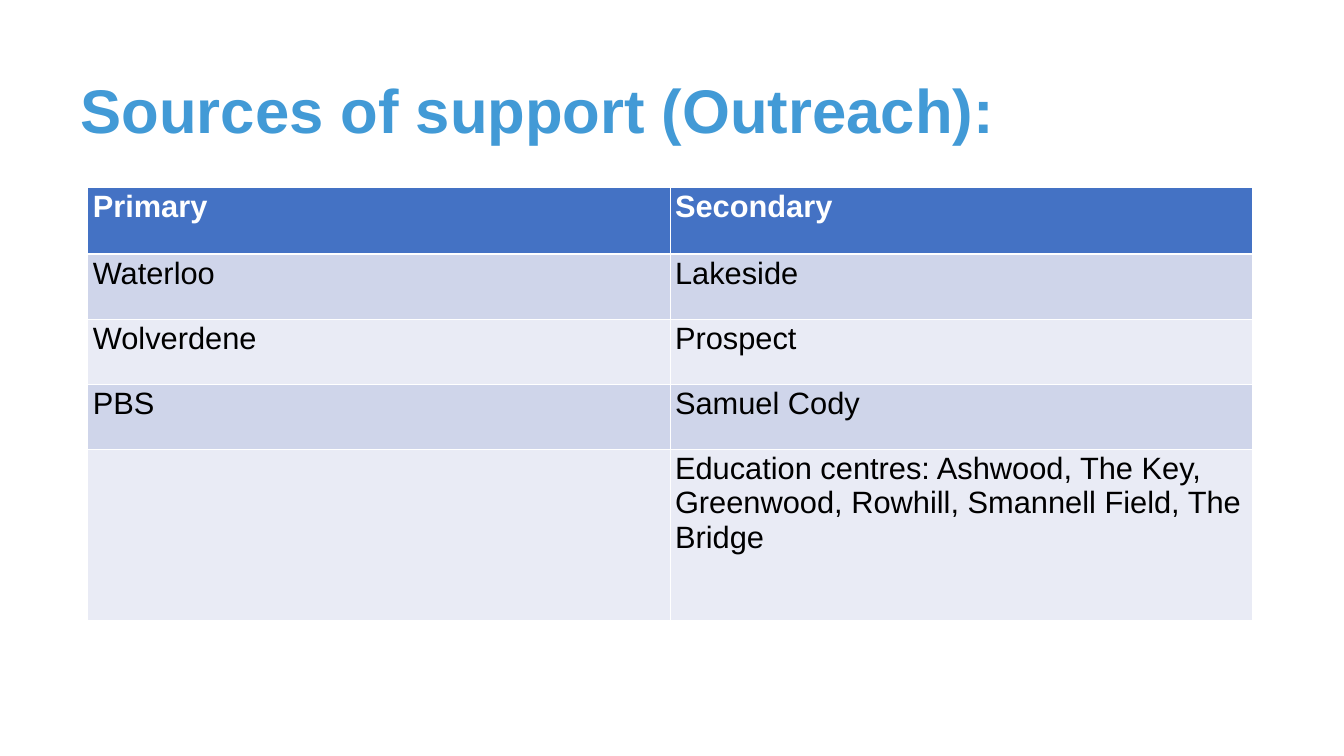
from dataclasses import dataclass

from lxml.etree import SubElement
from pptx import Presentation
from pptx.dml.color import RGBColor as RGB
from pptx.enum.text import MSO_ANCHOR as Anchor, MSO_AUTO_SIZE as Fit, PP_ALIGN as Align
from pptx.oxml.ns import qn
from pptx.util import Inches, Pt


@dataclass(frozen=True)
class Theme:
    """Colours, font and type sizes of the slide."""
    font: str = "Arial"
    title: str = "429AD6"
    head: str = "4472C4"
    bands: tuple = ("CFD5EA", "E9EBF5")
    light: str = "FFFFFF"
    dark: str = "000000"
    big: int = 88
    text: int = 44


THEME = Theme()
ROWS = [
    ("Primary", "Secondary"),
    ("Waterloo", "Lakeside"),
    ("Wolverdene", "Prospect"),
    ("PBS", "Samuel Cody"),
    ("", "Education centres: Ashwood, The Key, Greenwood, Rowhill, "
         "Smannell Field, The Bridge"),
]
HEIGHTS = [1.32, 1.29, 1.29, 1.29, 3.4]


def style(para, size, color, bold):
    """Set the font of a paragraph."""
    look = {"name": THEME.font, "size": Pt(size), "bold": bold}
    for key, value in look.items():
        setattr(para.font, key, value)
    para.font.color.rgb = RGB.from_string(color)


def add_title(slide, text, box):
    """Place and format the title placeholder."""
    title = slide.shapes.title
    for key, value in zip(("left", "top", "width", "height"), box):
        setattr(title, key, Inches(value))
    frame = title.text_frame
    form = {"text": text, "word_wrap": True, "auto_size": Fit.NONE,
            "vertical_anchor": Anchor.MIDDLE}
    for key, value in form.items():
        setattr(frame, key, value)
    para = frame.paragraphs[0]
    para.alignment, para.line_spacing = Align.LEFT, 0.9
    style(para, THEME.big, THEME.title, True)


def add_edges(cell, widths):
    """Draw the borders of a cell, given a width in points for each side."""
    props = cell._tc.get_or_add_tcPr()
    for side, width in widths.items():
        line = SubElement(props, qn(f"a:ln{side}"), w=str(Pt(width)))
        fill = SubElement(line, qn("a:solidFill"))
        SubElement(fill, qn("a:srgbClr"), val=THEME.light)


def fill_cell(cell, text, row):
    """Write one cell in the look of its row."""
    head = row == 0
    add_edges(cell, {"L": 1, "R": 1, "T": 3 if row == 1 else 1, "B": 3 if head else 1})
    cell.fill.solid()
    color = THEME.head if head else THEME.bands[(row - 1) % 2]
    cell.fill.fore_color.rgb = RGB.from_string(color)
    cell.text = text
    style(cell.text_frame.paragraphs[0], THEME.text,
          THEME.light if head else THEME.dark, head)


def add_grid(slide, rows, heights, left, top, width):
    """Add the table with equal columns."""
    count = len(rows[0])
    box = map(Inches, (left, top, width, sum(heights)))
    table = slide.shapes.add_table(len(rows), count, *box).table
    for col in table.columns:
        col.width = Inches(width / count)
    for row, (texts, height) in enumerate(zip(rows, heights)):
        table.rows[row].height = Inches(height)
        for col, text in enumerate(texts):
            fill_cell(table.cell(row, col), text, row)


def main():
    """Build and save the slide."""
    deck = Presentation()
    deck.slide_width, deck.slide_height = Inches(26.66), Inches(15)
    slide = deck.slides.add_slide(deck.slide_layouts[5])
    add_title(slide, "Sources of support (Outreach):", (1.5, 0.8, 23.33, 2.9))
    add_grid(slide, ROWS, HEIGHTS, 1.74, 3.72, 23.1)
    deck.save("out.pptx")


if __name__ == "__main__":
    main()
